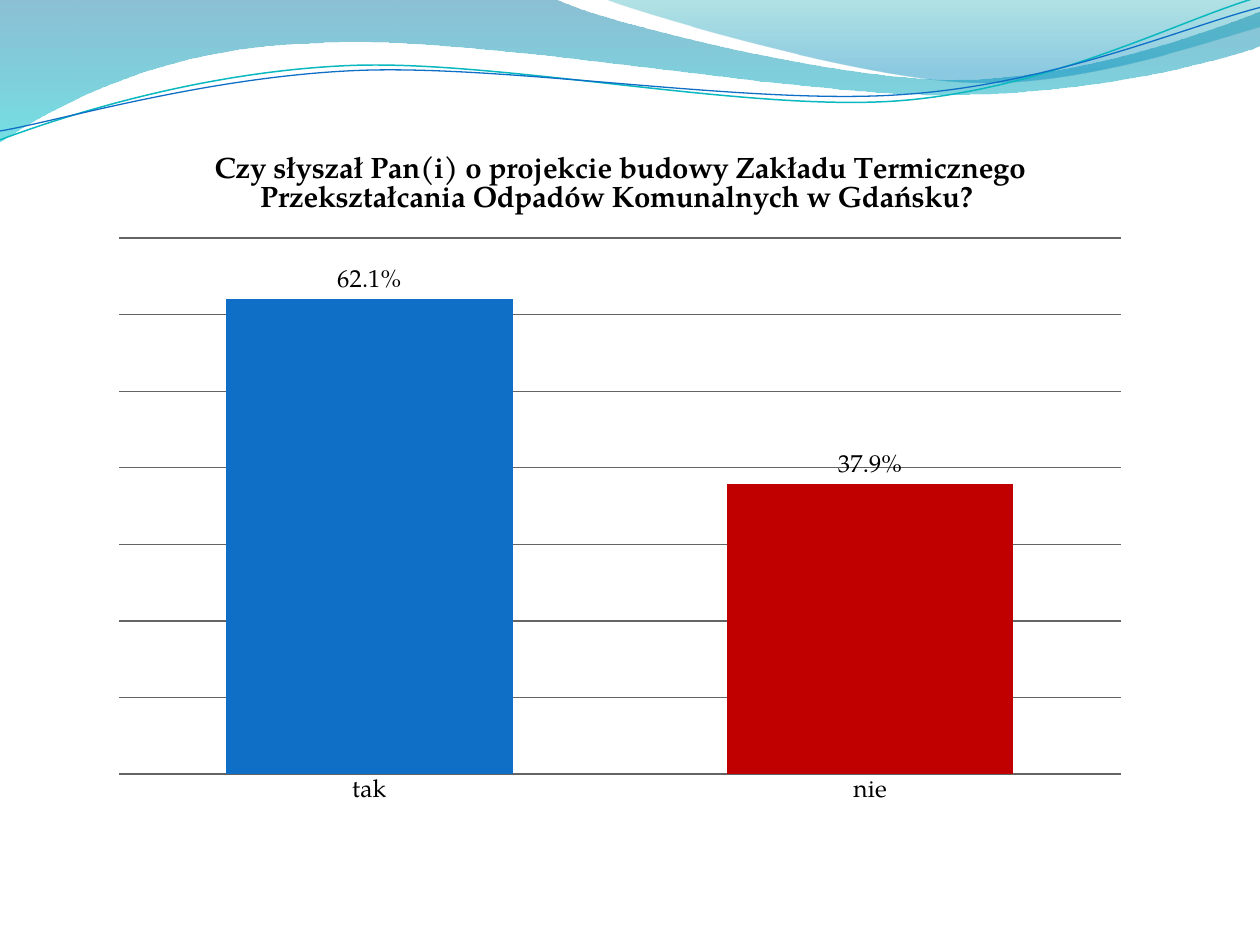
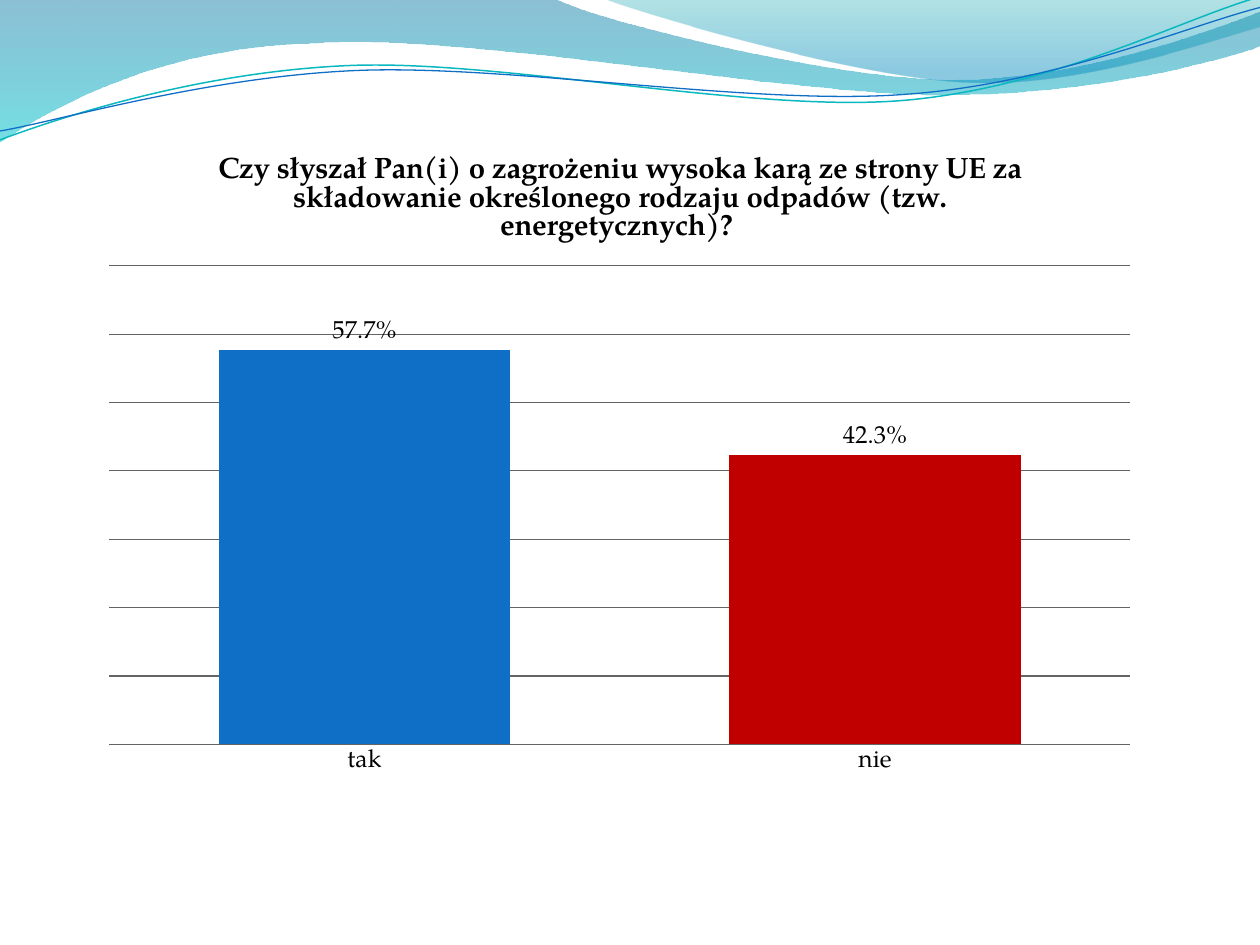
from math import cos, radians, sin

from lxml import etree
from pptx import Presentation
from pptx.chart.data import CategoryChartData
from pptx.dml.color import RGBColor
from pptx.enum.chart import XL_CHART_TYPE, XL_LABEL_POSITION, XL_TICK_MARK
from pptx.oxml.ns import qn
from pptx.util import Inches, Pt

COLUMN = XL_CHART_TYPE.COLUMN_CLUSTERED
OUTSIDE_END = XL_LABEL_POSITION.OUTSIDE_END
NO_TICKS = XL_TICK_MARK.NONE

FONT = "TeX Gyre Pagella"
PERCENT = "0.0%"
COLORS = {
    "text": "000000", "grid": "646464", "yes": "0F6FC6", "no": "C00000",
    "deep": "0074A1", "aqua": "00C6CF", "teal": "00A1A9", "sky": "008BBF",
    "line_teal": "0AB8BF", "line_blue": "0F6FC6",
}
ANSWERS = [("tak", "yes"), ("nie", "no")]
SURVEY = [
    {"question": "Czy słyszał Pan(i) o projekcie budowy Zakładu Termicznego "
                 "Przekształcania Odpadów Komunalnych w Gdańsku? ",
     "shares": (0.621, 0.379), "box": (0.78, 1.02, 8.28, 5.47)},
    {"question": "Czy słyszał Pan(i) o zagrożeniu wysoka karą ze strony UE za "
                 "składowanie określonego rodzaju odpadów (tzw. energetycznych)? ",
     "shares": (0.577, 0.423), "box": (0.7, 1.02, 8.44, 5.23)},
]
BANDS = [
    {"start": (0, 0), "stops": [(0, "deep", 45), (1, "aqua", 55)], "steps": [
        [(4.4, -0.01)],
        [(4.76, 0.17), (6.64, 0.63), (7.58, 0.63)],
        [(8.53, 0.63), (9.58, 0.26), (10, 0.09)],
        [(10.01, 0.36)],
        [(9.83, 0.44), (8.7, 0.76), (7.46, 0.75)],
        [(6.22, 0.75), (3.82, 0.28), (2.57, 0.34)],
        [(1.29, 0.36), (0.46, 0.83), (-0.01, 1.13)],
        [(0, 0)]]},
    {"start": (4.79, -0.01), "stops": [(0, "teal", 30), (0.8, "sky", 45)], "steps": [
        [(5.09, 0.11), (6.82, 0.62), (7.69, 0.65)],
        [(8.56, 0.69), (9.61, 0.32), (10, 0.21)],
        [(10, 0)],
        [(4.79, -0.01)]]},
]
TILT = -2.7
WAVE_LINES = [
    {"start": (0, 1.11), "center": (4.99, 0.58), "color": "line_teal", "width": 0.85,
     "steps": [
         [(0.48, 0.93), (1.58, 0.57), (2.77, 0.52)],
         [(3.95, 0.47), (5.93, 0.89), (7.13, 0.8)],
         [(8.33, 0.71), (9.38, 0.15), (9.98, -0.02)]]},
    {"start": (0, 1.04), "center": (5, 0.59), "color": "line_blue", "width": 0.75,
     "steps": [
         [(0.47, 0.96), (1.64, 0.61), (2.83, 0.56)],
         [(4.03, 0.51), (5.97, 0.84), (7.17, 0.75)],
         [(8.36, 0.67), (9.41, 0.21), (10, 0.06)]]},
]


def color(name):
    return RGBColor.from_string(COLORS[name])


def rotate(point, center, degrees):
    angle = radians(degrees)
    x, y = point[0] - center[0], point[1] - center[1]
    return (center[0] + x * cos(angle) - y * sin(angle),
            center[1] + x * sin(angle) + y * cos(angle))


def add_curved_shape(slide, start, steps, closed):
    points = [start] + [point for step in steps for point in step]
    points = [(Inches(x), Inches(y)) for x, y in points]
    builder = slide.shapes.build_freeform(*points[0])
    builder.add_line_segments(points[1:], close=closed)
    shape = builder.convert_to_shape()
    shape.shadow.inherit = False
    outline = next(shape.element.iter(qn("a:path")))
    segments = iter(outline.findall(qn("a:lnTo")))
    for step in steps:
        nodes = [next(segments) for _ in step]
        if len(step) == 3:
            curve = etree.Element(qn("a:cubicBezTo"))
            nodes[0].addprevious(curve)
            for node in nodes:
                curve.append(node[0])
                outline.remove(node)
    return shape


def add_band(slide, band):
    shape = add_curved_shape(slide, band["start"], band["steps"], True)
    shape.line.fill.background()
    shape.fill.gradient()
    shape.fill.gradient_angle = 270
    for stop, (position, name, _) in zip(shape.fill.gradient_stops, band["stops"]):
        stop.position = position
        stop.color.rgb = color(name)
    for stop, (_, _, opacity) in zip(shape.element.iter(qn("a:gs")), band["stops"]):
        etree.SubElement(stop[0], qn("a:alpha"), val=str(opacity * 1000))
    return shape


def add_wave_line(slide, wave):
    start = rotate(wave["start"], wave["center"], -TILT)
    steps = [[rotate(point, wave["center"], -TILT) for point in step]
             for step in wave["steps"]]
    shape = add_curved_shape(slide, start, steps, False)
    shape.rotation = TILT
    shape.fill.background()
    shape.line.color.rgb = color(wave["color"])
    shape.line.width = Pt(wave["width"])
    return shape


def add_master_waves(presentation, slide):
    shapes = [add_band(slide, band) for band in BANDS]
    shapes += [add_wave_line(slide, wave) for wave in WAVE_LINES]
    tree = presentation.slide_master.shapes.element
    for position, shape in enumerate(shapes, start=2):
        tree.insert(position, shape.element)


def set_font(font, size):
    font.name = FONT
    font.size = Pt(size)
    font.color.rgb = color("text")


def style_line(line):
    line.color.rgb = color("grid")
    line.width = Pt(0.75)


def add_survey_chart(slide, survey):
    data = CategoryChartData(number_format=PERCENT)
    data.categories = [answer for answer, _ in ANSWERS]
    data.add_series("Series 1", survey["shares"])
    box = [Inches(length) for length in survey["box"]]
    chart = slide.shapes.add_chart(COLUMN, *box, data).chart
    set_font(chart.font, 14)
    chart.has_legend = False

    chart.has_title = True
    chart.chart_title.include_in_layout = False
    run = chart.chart_title.text_frame.paragraphs[0].add_run()
    run.text = survey["question"]
    set_font(run.font, 16.8)
    run.font.bold = True

    value_axis = chart.value_axis
    value_axis.minimum_scale, value_axis.maximum_scale = 0, 0.7
    value_axis.major_unit = 0.1
    value_axis.visible = False
    value_axis.has_major_gridlines = True
    style_line(value_axis.major_gridlines.format.line)
    value_axis.tick_labels.number_format = PERCENT
    value_axis.tick_labels.number_format_is_linked = False
    category_axis = chart.category_axis
    category_axis.major_tick_mark = NO_TICKS
    category_axis.minor_tick_mark = NO_TICKS
    style_line(category_axis.format.line)

    plot = chart.plots[0]
    plot.gap_width, plot.overlap = 75, -25
    plot.vary_by_categories = False
    series = plot.series[0]
    series.format.fill.solid()
    series.format.fill.fore_color.rgb = color("yes")
    no_fill = series.points[1].format.fill
    no_fill.solid()
    no_fill.fore_color.rgb = color(ANSWERS[1][1])
    labels = series.data_labels
    labels.show_value = True
    labels.position = OUTSIDE_END
    labels.number_format = PERCENT
    labels.number_format_is_linked = False
    set_font(labels.font, 14)


def main():
    presentation = Presentation()
    presentation.slide_width, presentation.slide_height = Inches(10), Inches(7.5)
    blank = presentation.slide_layouts.get_by_name("Blank")
    slides = [presentation.slides.add_slide(blank) for _ in SURVEY]
    add_master_waves(presentation, slides[0])
    for slide, survey in zip(slides, SURVEY):
        add_survey_chart(slide, survey)
    presentation.save("out.pptx")


if __name__ == "__main__":
    main()
